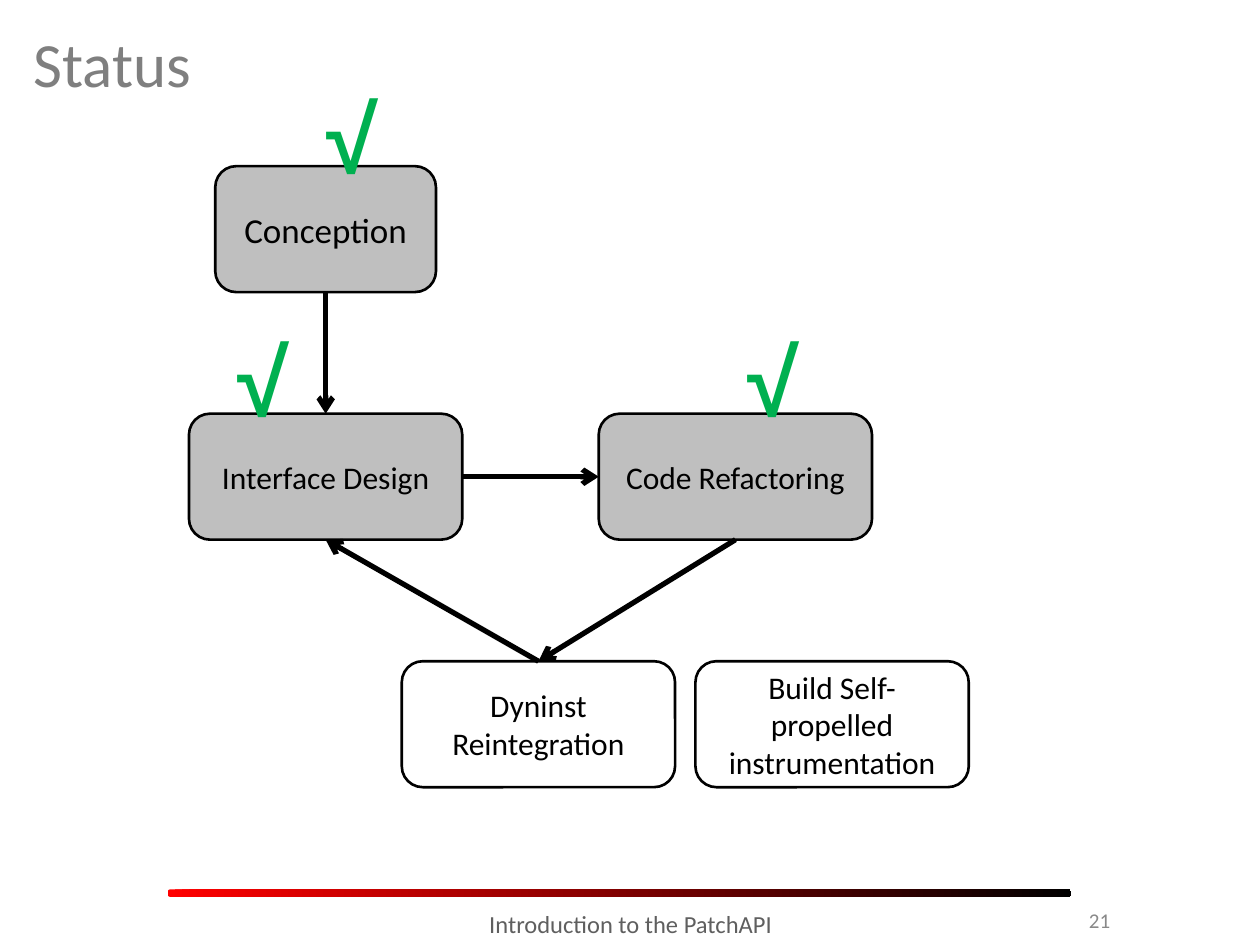
from lxml import etree
from pptx import Presentation
from pptx import util as u
from pptx.dml.color import RGBColor
from pptx.enum import shapes, text
from pptx.oxml import ns

COLORS = {
    "title": "7F7F7F", "footer": "5F5F5F", "number": "898989",
    "ink": "000000", "done": "BFBFBF", "open": "FFFFFF",
    "check": "00B050", "rule_start": "FF0000", "rule_end": "000000",
}
STEP_HEIGHT = 2.54
ROW_PITCH = 4.99
STEP_WIDTH = 5.51

# label: (left, row, width, font size, state, check mark offset)
STEPS = {
    "Conception": (0.53, 0, 4.45, 20, "done", (1.98, -1.88)),
    "Interface Design": (0, 1, STEP_WIDTH, 18, "done", (0.71, -1.98)),
    "Code Refactoring": (8.26, 1, STEP_WIDTH, 18, "done", (2.74, -1.98)),
    "Dyninst Reintegration": (4.29, 2, STEP_WIDTH, 18, "open", None),
    "Build Self-propelled instrumentation":
        (10.21, 2, STEP_WIDTH, 18, "open", None),
}
TOP, LEFT, BOTTOM, RIGHT = range(4)  # connection sites of a step
FLOW = [
    ("Conception", BOTTOM, "Interface Design", TOP),
    ("Interface Design", RIGHT, "Code Refactoring", LEFT),
    ("Code Refactoring", BOTTOM, "Dyninst Reintegration", TOP),
    ("Dyninst Reintegration", TOP, "Interface Design", BOTTOM),
]


def rgb(name):
    return RGBColor.from_string(COLORS[name])


def cm(*lengths):
    return [u.Cm(length) for length in lengths]


def write(holder, words, color, align=text.PP_ALIGN.CENTER,
          anchor=text.MSO_ANCHOR.MIDDLE, wrap=True, **font):
    frame = holder.text_frame
    frame.word_wrap = wrap
    frame.vertical_anchor = anchor
    paragraph = frame.paragraphs[0]
    paragraph.alignment = align
    run = paragraph.add_run()
    run.text = words
    run.font.color.rgb = rgb(color)
    for key, value in {"name": "Calibri", **font}.items():
        setattr(run.font, key, value)


def add_label(slide, box, words, color, **style):
    label = slide.shapes.add_textbox(*cm(*box))
    write(label, words, color, **style)
    return label


def add_title(slide, box):
    add_label(slide, box, "Status", "title", align=text.PP_ALIGN.LEFT,
              size=u.Pt(36))


def add_step(slide, box, words, size, state):
    step = slide.shapes.add_shape(shapes.MSO_SHAPE.ROUNDED_RECTANGLE, *cm(*box))
    step.shadow.inherit = False
    step.fill.solid()
    step.fill.fore_color.rgb = rgb(state)
    step.line.color.rgb = rgb("ink")
    step.line.width = u.Pt(1.5)
    write(step, words, "ink", size=u.Pt(size))
    return step


def add_arrow(slide, start, start_site, end, end_site):
    arrow = slide.shapes.add_connector(shapes.MSO_CONNECTOR.STRAIGHT, 0, 0, 0, 0)
    arrow.begin_connect(start, start_site)
    arrow.end_connect(end, end_site)
    arrow.line.color.rgb = rgb("ink")
    arrow.line.width = u.Pt(3)
    etree.SubElement(arrow.line._get_or_add_ln(), ns.qn("a:tailEnd"), type="arrow")
    etree.SubElement(arrow._element.spPr, ns.qn("a:effectLst"))


def add_flowchart(slide, box):
    left, top = box[:2]
    # Steps
    steps = {}
    for name, (dx, row, width, size, state, _) in STEPS.items():
        step_box = (left + dx, top + row * ROW_PITCH, width, STEP_HEIGHT)
        steps[name] = add_step(slide, step_box, name, size, state)
    # Arrows
    for start, start_site, end, end_site in FLOW:
        add_arrow(slide, steps[start], start_site, steps[end], end_site)
    # Check marks on finished steps
    for dx, row, _, _, _, offset in STEPS.values():
        if offset:
            check_box = (left + dx + offset[0],
                         top + row * ROW_PITCH + offset[1], 1.57, 2.57)
            check = add_label(slide, check_box, "√", "check", wrap=False,
                              anchor=text.MSO_ANCHOR.TOP, name="Arial",
                              size=u.Pt(54), bold=True)
            check.text_frame.auto_size = text.MSO_AUTO_SIZE.SHAPE_TO_FIT_TEXT


def add_footer(slide, box):
    left, top, width, _ = box
    # Red to black rule
    rule = slide.shapes.add_shape(shapes.MSO_SHAPE.ROUNDED_RECTANGLE,
                                  *cm(left, top, width, 0.15))
    rule.adjustments[0] = 0.33
    rule.shadow.inherit = False
    rule.line.fill.background()
    rule.fill.gradient()
    rule.fill.gradient_angle = 0
    for stop, color in zip(rule.fill.gradient_stops, ("rule_start", "rule_end")):
        stop.color.rgb = rgb(color)
    # Slide number and talk title
    add_label(slide, (left + 15.87, top + 0.1, 3.38, 1.02), "21", "number",
              align=text.PP_ALIGN.RIGHT, size=u.Pt(12))
    add_label(slide, (left + 2.77, top + 0.28, 13.13, 1.02),
              "Introduction to the PatchAPI", "footer",
              anchor=text.MSO_ANCHOR.TOP, size=u.Pt(14))


def main():
    deck = Presentation()
    deck.slide_width, deck.slide_height = cm(25.4, 19.05)
    slide = deck.slides.add_slide(deck.slide_layouts[6])
    add_footer(slide, (3.38, 17.93, 18.21, 1.12))
    add_title(slide, (0.43, 0.2, 24.56, 2.11))
    add_flowchart(slide, (3.81, 3.35, 15.72, 12.53))
    deck.save("out.pptx")


if __name__ == "__main__":
    main()
